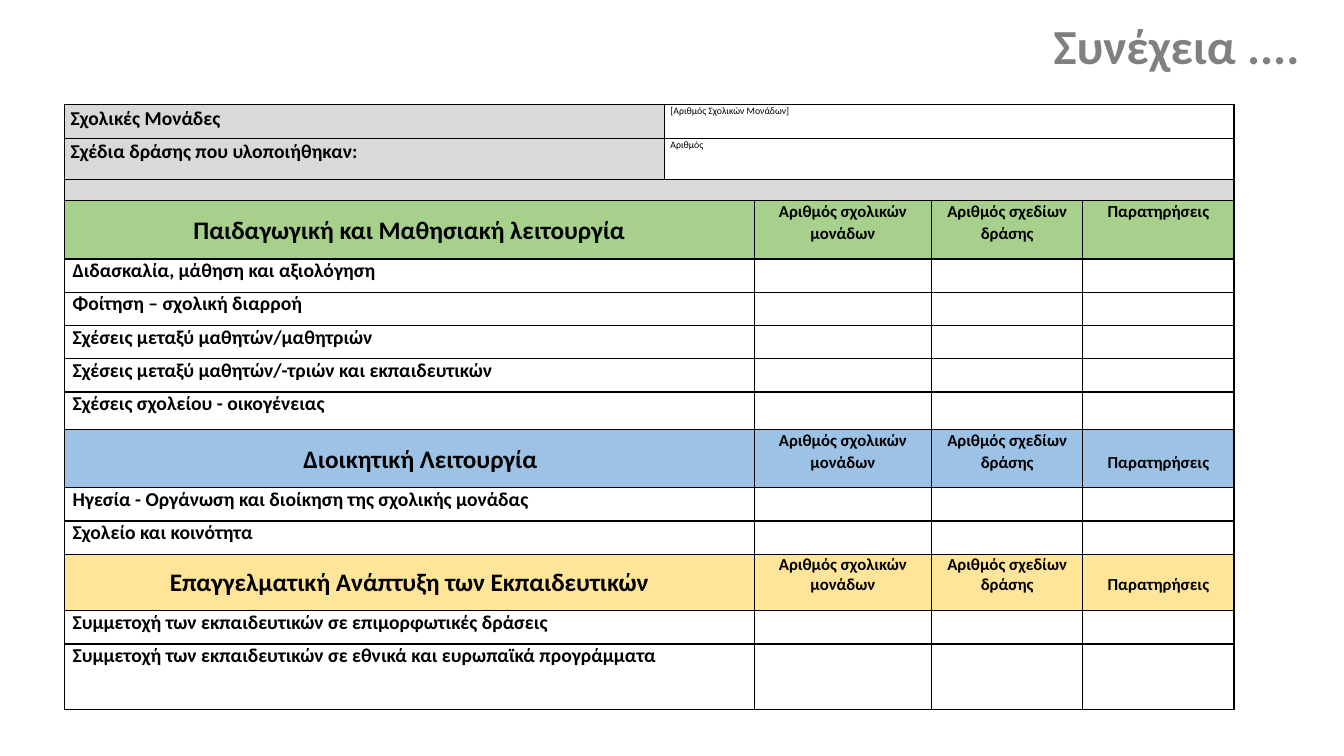
from lxml import etree
from pptx import Presentation
from pptx.dml.color import RGBColor
from pptx.enum.text import MSO_ANCHOR, PP_ALIGN
from pptx.oxml.ns import qn
from pptx.util import Inches, Pt

LEFT, CENTER, RIGHT = PP_ALIGN.LEFT, PP_ALIGN.CENTER, PP_ALIGN.RIGHT
TOP, MIDDLE = MSO_ANCHOR.TOP, MSO_ANCHOR.MIDDLE
FONT = "Calibri"
COLORS = {
    "title": "808080",
    "ink": "000000",
    "summary": "D9D9D9",
    "teaching": "A8D08D",
    "administration": "9CC2E5",
    "development": "FFE599",
}
COLUMNS = [5.95, 0.89, 1.76, 1.5, 1.5]
ENTRY_HEIGHT = 0.33
HEADINGS = ["Αριθμός σχολικών μονάδων", "Αριθμός σχεδίων δράσης", "Παρατηρήσεις"]
SUMMARY = [
    ("Σχολικές Μονάδες", "[Αριθμός Σχολικών Μονάδων]", 0.33),
    ("Σχέδια δράσης που υλοποιήθηκαν:", "Αριθμός", 0.41),
]
GAP_HEIGHT = 0.21
SECTIONS = [
    {
        "name": "Παιδαγωγική και Μαθησιακή λειτουργία",
        "color": "teaching", "height": 0.58, "indent": 0, "drop": 0,
        "spacing": 1.07, "last_height": 0.37,
        "entries": [
            "Διδασκαλία, μάθηση και αξιολόγηση",
            "Φοίτηση – σχολική διαρροή",
            "Σχέσεις μεταξύ μαθητών/μαθητριών",
            "Σχέσεις μεταξύ μαθητών/-τριών και εκπαιδευτικών",
            "Σχέσεις σχολείου - οικογένειας",
        ],
    },
    {
        "name": "Διοικητική Λειτουργία",
        "color": "administration", "height": 0.58, "indent": 0.22, "drop": 0.22,
        "spacing": 1.07, "last_height": ENTRY_HEIGHT,
        "entries": [
            "Ηγεσία - Οργάνωση και διοίκηση της σχολικής μονάδας",
            "Σχολείο και κοινότητα",
        ],
    },
    {
        "name": "Επαγγελματική Ανάπτυξη των Εκπαιδευτικών",
        "color": "development", "height": 0.56, "indent": 0, "drop": 0.2,
        "spacing": 1.0, "last_height": 0.65,
        "entries": [
            "Συμμετοχή των εκπαιδευτικών σε επιμορφωτικές δράσεις",
            "Συμμετοχή των εκπαιδευτικών σε εθνικά και ευρωπαϊκά προγράμματα",
        ],
    },
]


def write(paragraph, words, size, color="ink", bold=True, align=LEFT, spacing=1.0):
    paragraph.alignment = align
    paragraph.line_spacing = spacing
    run = paragraph.add_run()
    run.text = words
    run.font.name = FONT
    run.font.size = Pt(size)
    run.font.bold = bold
    run.font.color.rgb = RGBColor.from_string(COLORS[color])


def add_title(slide, words):
    title = slide.shapes.title
    title.left, title.top = Inches(10.25), Inches(0.01)
    title.width, title.height = Inches(2.74), Inches(0.95)
    title.text_frame.word_wrap = True
    title.text_frame.vertical_anchor = MIDDLE
    write(title.text_frame.paragraphs[0], words, 35, "title", align=RIGHT, spacing=0.9)


def prepare_cell(cell):
    cell.margin_left = cell.margin_right = Inches(0.06)
    cell.margin_top = cell.margin_bottom = 0
    cell.fill.background()
    properties = cell._tc.get_or_add_tcPr()
    for position, edge in enumerate(("a:lnL", "a:lnR", "a:lnT", "a:lnB")):
        line = etree.Element(qn(edge), w=str(Pt(1)))
        fill = etree.SubElement(line, qn("a:solidFill"))
        etree.SubElement(fill, qn("a:srgbClr"), val=COLORS["ink"])
        properties.insert(position, line)
    empty_text = cell.text_frame.paragraphs[0]._p
    etree.SubElement(empty_text, qn("a:endParaRPr"), sz="1000")


def paint(cell, color):
    cell.fill.solid()
    cell.fill.fore_color.rgb = RGBColor.from_string(COLORS[color])


def fill_cell(cell, words, size, color=None, indent=0, drop=0, anchor=TOP, **style):
    cell.margin_left = Inches(0.06 + indent)
    cell.margin_top = Inches(drop)
    cell.vertical_anchor = anchor
    if color:
        paint(cell, color)
    write(cell.text_frame.paragraphs[0], words, size, **style)


def add_summary(table):
    for row, (label, value, _) in enumerate(SUMMARY):
        fill_cell(table.cell(row, 0), label, 14, "summary", spacing=1.07)
        answer = table.cell(row, 1)
        answer.merge(table.cell(row, 4))
        fill_cell(answer, value, 7, bold=False, spacing=1.07)
        paragraph = answer.text_frame.paragraphs[0]
        paragraph.space_before = paragraph.space_after = Pt(6)
    gap = table.cell(len(SUMMARY), 0)
    gap.merge(table.cell(len(SUMMARY), 4))
    paint(gap, "summary")


def add_section(table, row, section):
    color, spacing = section["color"], section["spacing"]
    name = table.cell(row, 0)
    name.merge(table.cell(row, 1))
    fill_cell(name, section["name"], 18, color, section["indent"],
              anchor=MIDDLE, align=CENTER, spacing=spacing)
    for column, heading in enumerate(HEADINGS, 2):
        drop = section["drop"] if heading == HEADINGS[-1] else 0
        fill_cell(table.cell(row, column), heading, 12, color, drop=drop,
                  align=CENTER, spacing=spacing)
    for offset, entry in enumerate(section["entries"], 1):
        label = table.cell(row + offset, 0)
        label.merge(table.cell(row + offset, 1))
        fill_cell(label, entry, 14, indent=0.02)


def row_heights():
    heights = [height for _, _, height in SUMMARY] + [GAP_HEIGHT]
    for section in SECTIONS:
        regular = [ENTRY_HEIGHT] * (len(section["entries"]) - 1)
        heights += [section["height"], *regular, section["last_height"]]
    return heights


def add_report(slide):
    heights = row_heights()
    table = slide.shapes.add_table(
        len(heights), len(COLUMNS), Inches(0.64), Inches(1.04),
        Inches(sum(COLUMNS)), Inches(sum(heights))).table
    table.first_row = table.horz_banding = False
    for column, width in zip(table.columns, COLUMNS):
        column.width = Inches(width)
    for row, height in zip(table.rows, heights):
        row.height = Inches(height)
    for cell in table.iter_cells():
        prepare_cell(cell)
    add_summary(table)
    row = len(SUMMARY) + 1
    for section in SECTIONS:
        add_section(table, row, section)
        row += 1 + len(section["entries"])


def main():
    deck = Presentation()
    deck.slide_width, deck.slide_height = Inches(13.33), Inches(7.5)
    slide = deck.slides.add_slide(deck.slide_layouts[5])
    add_title(slide, "Συνέχεια ....")
    add_report(slide)
    deck.save("out.pptx")


if __name__ == "__main__":
    main()
